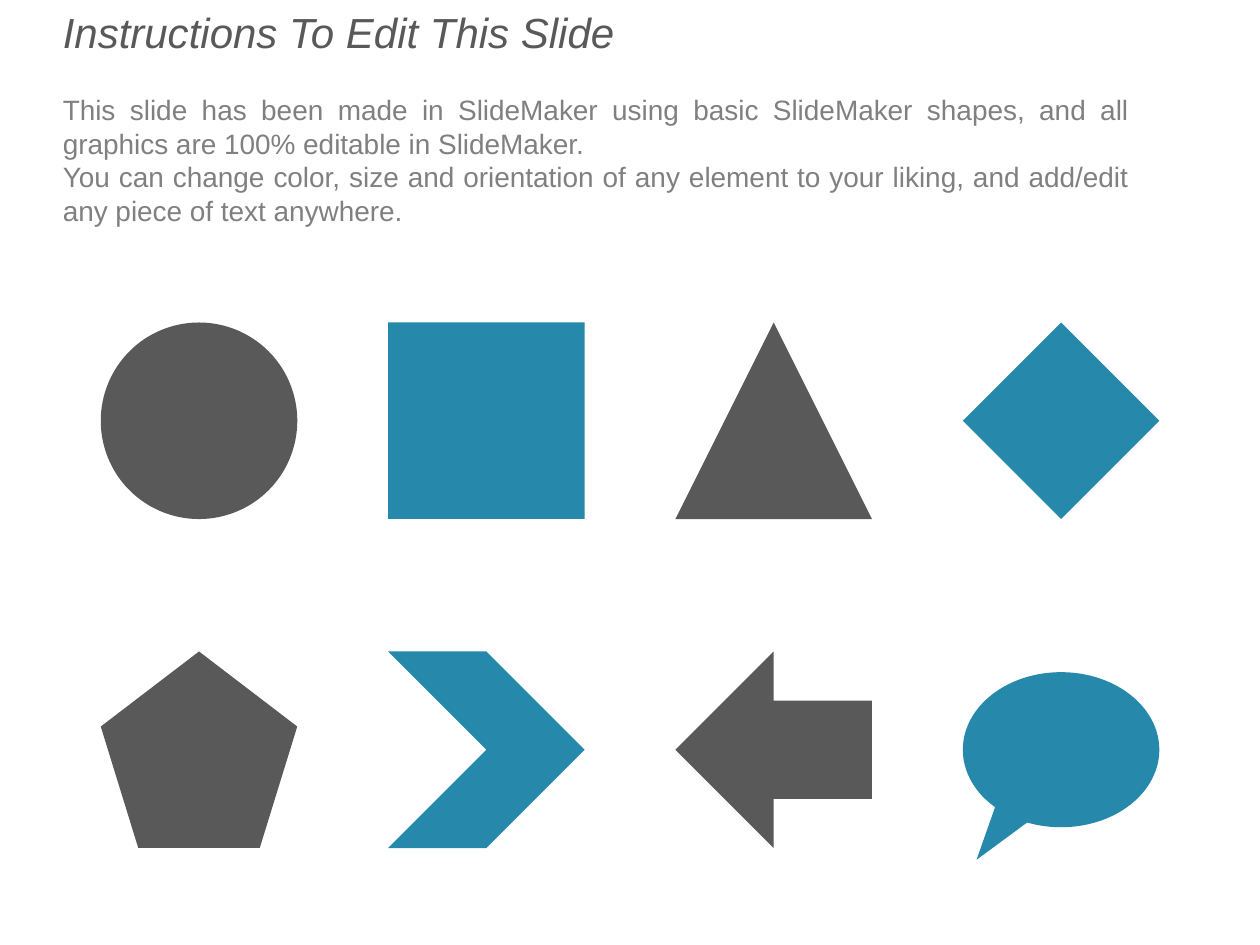
from pptx import Presentation
from pptx.dml.color import RGBColor
from pptx.enum.shapes import MSO_SHAPE as Shape
from pptx.enum.text import MSO_ANCHOR as Anchor, PP_ALIGN as Align
from pptx.util import Pt

TITLE = "Instructions To Edit This Slide"
BODY = [
    "This slide has been made in SlideMaker using basic SlideMaker shapes, "
    "and all graphics are 100% editable in SlideMaker.",
    "You can change color, size and orientation of any element to your liking, "
    "and add/edit any piece of text anywhere.",
]
SHAPE_ROWS = [
    [Shape.OVAL, Shape.RECTANGLE, Shape.ISOSCELES_TRIANGLE, Shape.DIAMOND],
    [Shape.REGULAR_PENTAGON, Shape.CHEVRON, Shape.LEFT_ARROW, Shape.OVAL_CALLOUT],
]
CALLOUT_TAIL = (-0.43, 0.71)

THEME = {
    "font": "Arial",
    "title_size": 24,
    "body_size": 16,
    "dark": RGBColor.from_string("595959"),
    "accent": RGBColor.from_string("2688AA"),
    "body": RGBColor.from_string("808080"),
}

SLIDE_W, SLIDE_H = 720, 540
TEXT_BOX = (28.8, 0, 623.5, 135.4)
GRID_LEFT, GRID_TOP = 57.6, 184.3
COL_STEP, ROW_STEP = 164.2, 188
CELL, CALLOUT_H = 112.3, 88.6


def write(p, text, *, size, color, italic=False, align=Align.LEFT, after=0):
    p.alignment = align
    p.space_after = Pt(after)
    r = p.add_run()
    r.text = text
    r.font.name = THEME["font"]
    r.font.size = Pt(size)
    r.font.italic = italic
    r.font.color.rgb = color


def add_instructions(slide):
    tf = slide.shapes.add_textbox(*map(Pt, TEXT_BOX)).text_frame
    tf.word_wrap = True
    tf.vertical_anchor = Anchor.TOP
    write(tf.paragraphs[0], TITLE, size=THEME["title_size"],
          color=THEME["dark"], italic=True, after=20.7)
    for text in BODY:
        write(tf.add_paragraph(), text, size=THEME["body_size"],
              color=THEME["body"], align=Align.JUSTIFY)


def add_shape_grid(slide):
    """Place the shapes in even cells, with colours alternating by column."""
    shapes = slide.shapes.add_group_shape().shapes
    for row, kinds in enumerate(SHAPE_ROWS):
        for col, kind in enumerate(kinds):
            is_callout = kind == Shape.OVAL_CALLOUT
            height = CALLOUT_H if is_callout else CELL
            left = GRID_LEFT + col * COL_STEP
            top = GRID_TOP + row * ROW_STEP + (CELL - height) / 2
            sp = shapes.add_shape(kind, Pt(left), Pt(top), Pt(CELL), Pt(height))
            sp.shadow.inherit = False
            sp.fill.solid()
            sp.fill.fore_color.rgb = THEME["accent" if col % 2 else "dark"]
            sp.line.fill.background()
            if is_callout:
                sp.adjustments[0], sp.adjustments[1] = CALLOUT_TAIL


def main():
    prs = Presentation()
    prs.slide_width, prs.slide_height = Pt(SLIDE_W), Pt(SLIDE_H)
    slide = prs.slides.add_slide(prs.slide_layouts[6])
    add_instructions(slide)
    add_shape_grid(slide)
    prs.save("out.pptx")


if __name__ == "__main__":
    main()
